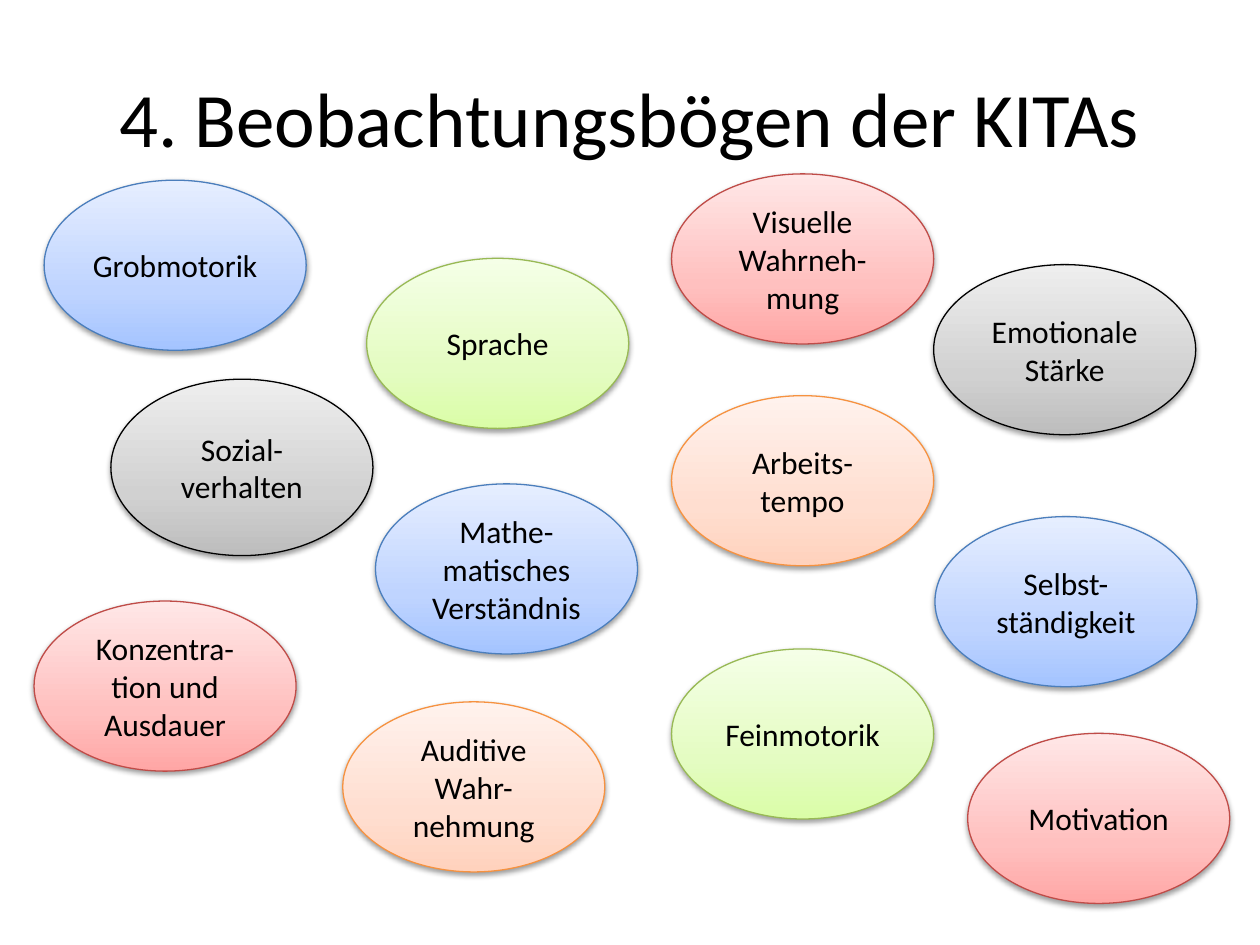
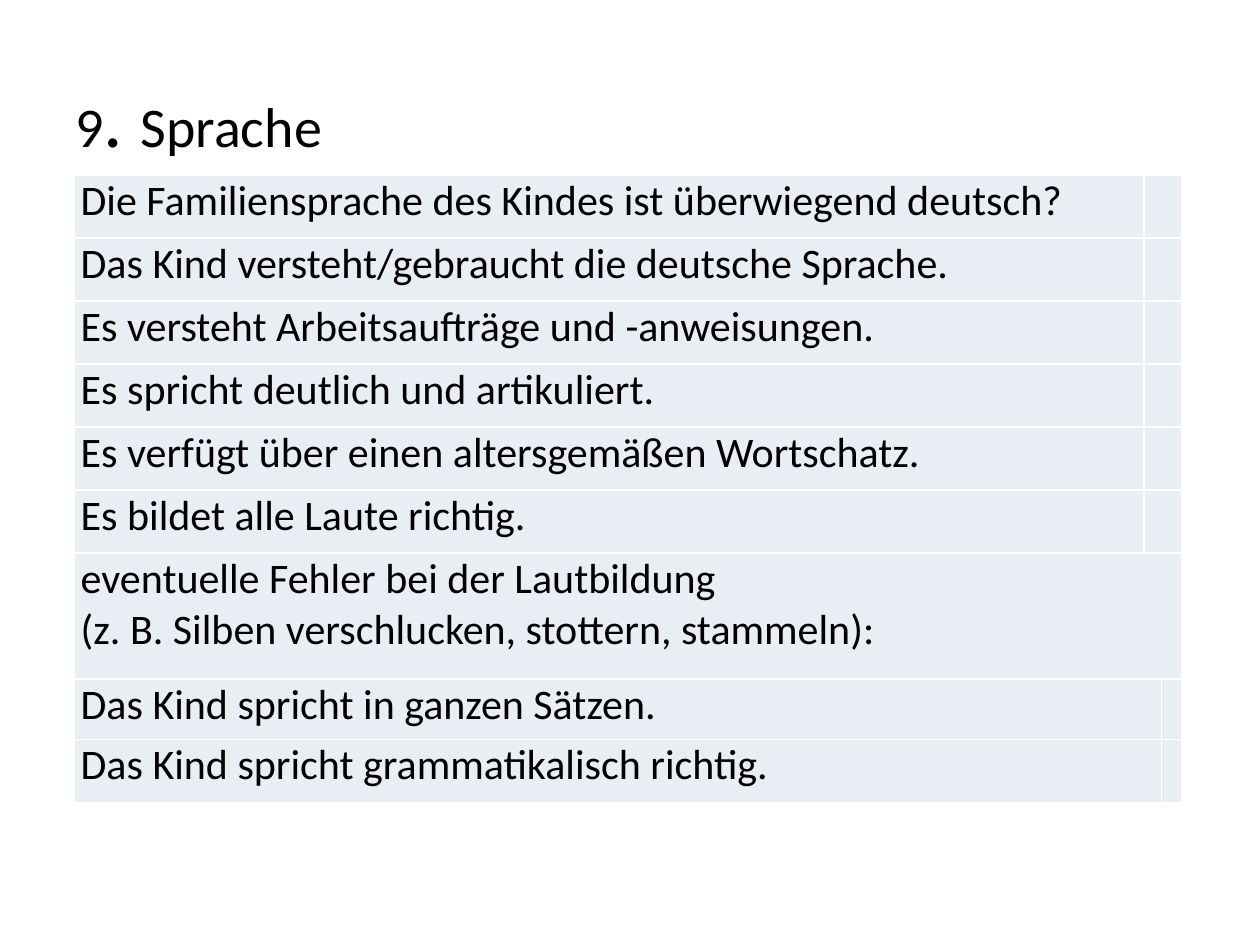
"""Builds two slides on kindergarten observation sheets: topic ovals and a language checklist."""
from lxml import etree
from pptx import Presentation
from pptx.dml.color import RGBColor
from pptx.enum.shapes import MSO_SHAPE
from pptx.enum.text import MSO_ANCHOR, PP_ALIGN
from pptx.oxml.ns import qn
from pptx.util import Inches, Pt

OVAL = MSO_SHAPE.OVAL
MIDDLE = MSO_ANCHOR.MIDDLE
CENTER = PP_ALIGN.CENTER
LEFT = PP_ALIGN.LEFT
FONT = "Calibri"
BLACK = "000000"
CELL = "E9EDF4"
STOPS = (0, 35, 100)
HUES = {
    "green": ("98B955", "DAFDA7", "E4FCC2", "F5FFE7"),
    "blue": ("4B7EBC", "A4C4FF", "BFD4FF", "E6EEFF"),
    "gray": (BLACK, "BDBDBD", "D1D1D1", "EEEEEE"),
    "orange": ("F69240", "FFD2BD", "FFDED0", "FFF2ED"),
    "red": ("BF4C48", "FFA6A5", "FFC0BF", "FFE7E7"),
}


def style(frame, size, align=LEFT):
    for par in frame.paragraphs:
        par.alignment = align
        for run in par.runs:
            run.font.name = FONT
            run.font.size = Pt(size)
            run.font.color.rgb = RGBColor.from_string(BLACK)


def add_page(title, size, align):
    page = deck.slides.add_slide(deck.slide_layouts[6])
    box = page.shapes.add_textbox(Inches(0.5), Inches(0.3), Inches(9), Inches(1.25))
    frame = box.text_frame
    frame.word_wrap = True
    frame.vertical_anchor = MIDDLE
    for part in title:
        frame.paragraphs[0].add_run().text = part
    style(frame, size, align)
    return page, frame


deck = Presentation()
deck.slide_width = Inches(10)
deck.slide_height = Inches(7.5)

page, head = add_page(["4. Beobachtungsbögen der KITAs"], 44, CENTER)

topics = [
    ("Sprache", 2.91, 2.05, 1.35, "green"),
    ("Grobmotorik", 0.35, 1.43, 1.35, "blue"),
    ("Feinmotorik", 5.33, 5.15, 1.35, "green"),
    ("Sozial-verhalten", 0.88, 3.01, 1.4, "gray"),
    ("Selbst-ständigkeit", 7.42, 4.1, 1.35, "blue"),
    ("Arbeits-tempo", 5.33, 3.14, 1.35, "orange"),
    ("Konzentra-tion und Ausdauer", 0.27, 4.77, 1.35, "red"),
    ("Motivation", 7.68, 5.82, 1.35, "red"),
    ("Emotionale Stärke", 7.41, 2.1, 1.35, "gray"),
    ("Mathe-matisches Verständnis", 2.98, 3.84, 1.35, "blue"),
    ("Visuelle Wahrneh-mung", 5.33, 1.38, 1.35, "red"),
    ("Auditive Wahr-nehmung", 2.72, 5.57, 1.35, "orange"),
]
for text, x, y, high, hue in topics:
    oval = page.shapes.add_shape(OVAL, Inches(x), Inches(y), Inches(2.08), Inches(high))
    edge, *shades = HUES[hue]
    oval.line.color.rgb = RGBColor.from_string(edge)
    oval.line.width = Pt(0.75)

    oval.fill.gradient()
    oval.fill.gradient_angle = 90
    props = oval._element.spPr
    stops = props.find(qn("a:gradFill")).find(qn("a:gsLst"))
    for old in list(stops):
        stops.remove(old)
    for pos, shade in zip(STOPS, shades):
        stop = etree.SubElement(stops, qn("a:gs"), pos=str(pos * 1000))
        etree.SubElement(stop, qn("a:srgbClr"), val=shade)

    oval.shadow.inherit = False
    cast = etree.SubElement(
        props.find(qn("a:effectLst")), qn("a:outerShdw"),
        blurRad=str(Pt(3.1)), dist=str(Pt(1.6)), dir="5400000", rotWithShape="0")
    tone = etree.SubElement(cast, qn("a:srgbClr"), val=BLACK)
    etree.SubElement(tone, qn("a:alpha"), val="38000")

    frame = oval.text_frame
    frame.text = text
    frame.word_wrap = True
    frame.vertical_anchor = MIDDLE
    frame.margin_left = frame.margin_right = Inches(0.04)
    frame.margin_top = frame.margin_bottom = Inches(0.04)
    style(frame, 18, CENTER)

page, head = add_page(["9", ". ", "Sprache"], 32, LEFT)
head.paragraphs[0].runs[1].font.size = Pt(44)

checks = [
    ("Die Familiensprache des Kindes ist überwiegend deutsch?", 0.5, 1, 2),
    ("Das Kind versteht/gebraucht die deutsche Sprache.", 0.5, 1, 2),
    ("Es versteht Arbeitsaufträge und -anweisungen.", 0.5, 1, 2),
    ("Es spricht deutlich und artikuliert.", 0.5, 1, 2),
    ("Es verfügt über einen altersgemäßen Wortschatz.", 0.5, 1, 2),
    ("Es bildet alle Laute richtig.", 0.5, 1, 2),
    ("eventuelle Fehler bei der Lautbildung\n"
     "(z. B. Silben verschlucken, stottern, stammeln):", 1, 0, 2),
    ("Das Kind spricht in ganzen Sätzen.", 0.48, 0, 1),
    ("Das Kind spricht grammatikalisch richtig.", 0.5, 0, 1),
]
grid = page.shapes.add_table(
    len(checks), 3, Inches(0.59), Inches(1.39), Inches(8.74), Inches(4.98)).table
grid.first_row = False
grid.horz_banding = False
for col, wide in zip(grid.columns, (8.49, 0.09, 0.16)):
    col.width = Inches(wide)
for num, (text, high, first, last) in enumerate(checks):
    grid.rows[num].height = Inches(high)
    for cell in grid.rows[num].cells:
        cell.fill.solid()
        cell.fill.fore_color.rgb = RGBColor.from_string(CELL)
        cell.margin_left = cell.margin_right = Inches(0.05)
        cell.margin_top = cell.margin_bottom = 0
    grid.cell(num, first).merge(grid.cell(num, last))
    frame = grid.cell(num, 0).text_frame
    frame.text = text
    style(frame, 24)

deck.save("out.pptx")
